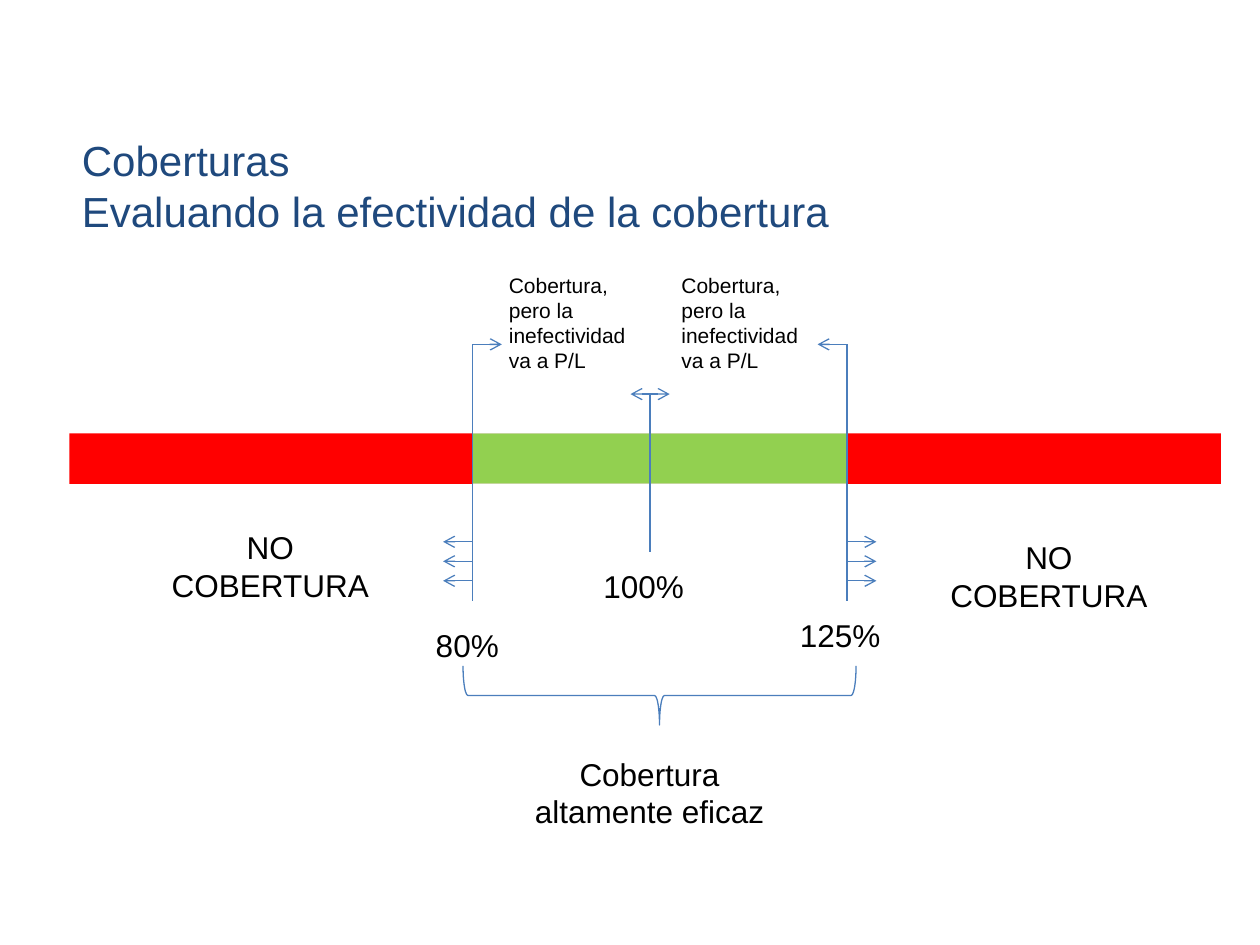
"""Build the slide on testing how effective a hedge is."""
from lxml.etree import SubElement
from pptx import Presentation
from pptx.dml.color import RGBColor
from pptx.enum.shapes import MSO_CONNECTOR, MSO_SHAPE
from pptx.enum.text import MSO_ANCHOR, MSO_AUTO_SIZE, PP_ALIGN
from pptx.oxml.ns import qn
from pptx.util import Pt

HUES = {"title": "1F497D", "text": "000000", "red": "FF0000",
        "green": "92D050", "edge": "C3D69B", "line": "4B7EBC"}
TITLE = ["Coberturas", "Evaluando la efectividad de la cobertura"]
PART = ["Cobertura,", "pero la inefectividad va a P/L"]
NONE = ["NO", "COBERTURA"]
LABELS = [
    (PART, (283.7, 151.9, 82, 65.5), {"size": 12}),
    (PART, (382.3, 151.9, 85, 65.5), {"size": 12}),
    (NONE, (78.5, 298, 152, 72.7), {"align": PP_ALIGN.CENTER}),
    (NONE, (523.4, 303.8, 152, 72.7), {"align": PP_ALIGN.CENTER}),
    (["80%"], (241.9, 354.2, 62, 28.8), {}),
    (["125%"], (450, 348.5, 62, 28.8), {}),
    (["100%"], (337.7, 320.4, 62, 28.8), {}),
    (["Cobertura", "altamente eficaz"], (270, 427.7, 202.3, 51.1),
     {"align": PP_ALIGN.CENTER}),
]
START, LOW, MID, HIGH, END = 39.6, 270, 371.5, 484, 697.7
BAR, THICK = 247.7, 28.8
TOP, FOOT, PEAK, BASE = 196.8, 343.4, 225.2, 315.4
STUB, FIRST, STEP = 16.8, 309.6, 11.15

deck = Presentation()
deck.slide_width, deck.slide_height = Pt(720), Pt(540)
slide = deck.slides.add_slide(deck.slide_layouts[5])
shapes = slide.shapes


def color(name):
    return RGBColor.from_string(HUES[name])


def write(lines, box, shape=None, size=18, hue="text", align=PP_ALIGN.LEFT):
    spot = [Pt(n) for n in box]
    shape = shape or shapes.add_textbox(*spot)
    shape.left, shape.top, shape.width, shape.height = spot
    frame = shape.text_frame
    frame.text = "\n".join(lines)
    frame.word_wrap = True
    frame.auto_size = MSO_AUTO_SIZE.NONE
    frame.vertical_anchor = MSO_ANCHOR.TOP
    for para in frame.paragraphs:
        para.alignment = align
        for run in para.runs:
            run.font.name, run.font.size = "Arial", Pt(size)
            run.font.color.rgb = color(hue)


def draw(kind, box, fill=None, edge=None):
    shape = shapes.add_shape(kind, *[Pt(n) for n in box])
    shape.shadow.inherit = False
    if fill:
        shape.fill.solid()
        shape.fill.fore_color.rgb = color(fill)
    else:
        shape.fill.background()
    if edge:
        shape.line.color.rgb = color(edge)
        shape.line.width = Pt(0.75)
    else:
        shape.line.fill.background()
    return shape


def link(x1, y1, x2, y2, ends=()):
    line = shapes.add_connector(MSO_CONNECTOR.STRAIGHT,
                                Pt(x1), Pt(y1), Pt(x2), Pt(y2))
    line.line.color.rgb = color("line")
    line.line.width = Pt(0.75)
    for end in ends:
        SubElement(line.line._get_or_add_ln(), qn(f"a:{end}"), type="arrow")
    SubElement(line._element.spPr, qn("a:effectLst"))


write(TITLE, (START, 73.4, 630, 65.5), shapes.title, size=24, hue="title")

for left, right, fill, edge in [(START, LOW, "red", None),
                                (HIGH, END, "red", None),
                                (LOW, HIGH, "green", "edge")]:
    draw(MSO_SHAPE.RECTANGLE, (left, BAR, right - left, THICK), fill, edge)

link(MID, PEAK, MID, BASE)
link(MID - 11.2, PEAK, MID + 11.2, PEAK, ["headEnd", "tailEnd"])
for x, way in [(LOW, -1), (HIGH, 1)]:
    link(x, TOP, x, FOOT)
    link(x, TOP, x - way * STUB, TOP, ["tailEnd"])
    for row in range(3):
        y = FIRST + row * STEP
        link(x, y, x + way * STUB, y, ["tailEnd"])

for lines, box, look in LABELS:
    write(lines, box, **look)

brace = draw(MSO_SHAPE.LEFT_BRACE, (360, 285.1, 33.8, 224.6), edge="line")
brace.rotation = 270

deck.save("out.pptx")
